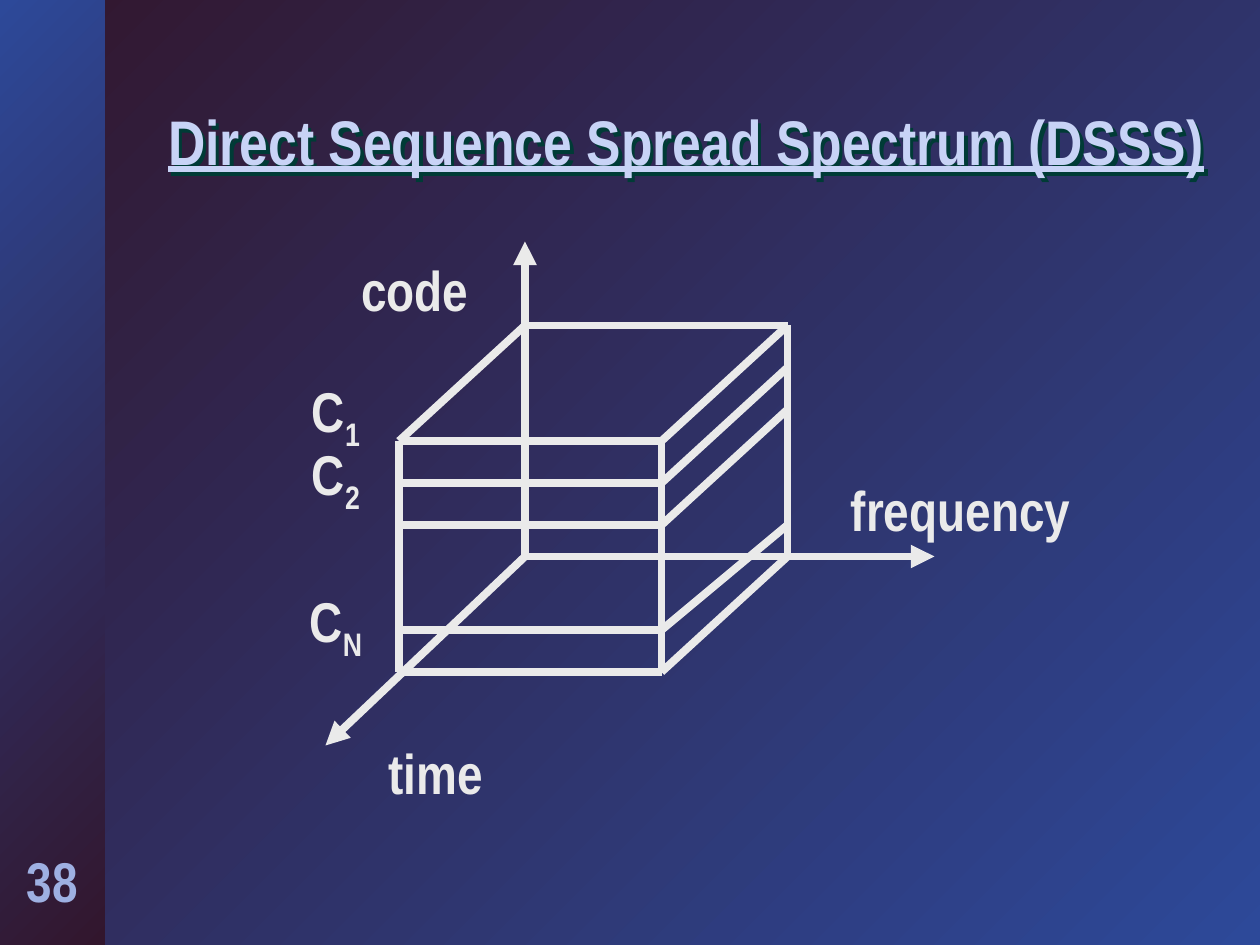
from collections import namedtuple

from lxml.etree import SubElement
from pptx import Presentation
from pptx.dml.color import RGBColor as Rgb
from pptx.enum.shapes import MSO_CONNECTOR as Connector, MSO_SHAPE as Preset
from pptx.enum.text import MSO_ANCHOR as Anchor, PP_ALIGN as Align
from pptx.oxml.ns import qn
from pptx.util import Inches, Pt

COLORS = {"wine": "32162D", "blue": "2D4999", "line": "EAEAEA",
          "title": "C8D3F6", "number": "9EB0E2", "shadow": "003B36"}
CELL = Inches(10) / 120
Box = namedtuple("Box", "left top width height")


def cells(*counts):
    """Turn counts of grid cells into lengths."""
    return [round(count * CELL) for count in counts]


def inside(box, left, top, width, height):
    """Return a box placed relative to the corner of another."""
    return Box(box.left + left, box.top + top, width, height)


def fill_gradient(fill, first, last):
    """Fill with a diagonal gradient from top left to bottom right."""
    fill.gradient()
    fill.gradient_angle = 315
    for stop, name, position in zip(fill.gradient_stops, (first, last), (0, 1)):
        stop.color.rgb = Rgb.from_string(COLORS[name])
        stop.position = position


def add_text(page, box, text, color="line", size=32, subscript="", **font):
    """Add a centred one-line label with an optional subscript."""
    shape = page.shapes.add_textbox(*cells(*box))
    frame = shape.text_frame
    layout = {"word_wrap": False, "vertical_anchor": Anchor.MIDDLE, "margin_left": 0,
              "margin_right": 0, "margin_top": 0, "margin_bottom": 0}
    for name, value in layout.items():
        setattr(frame, name, value)
    para = frame.paragraphs[0]
    para.alignment = Align.CENTER
    style = {"name": "Arial Narrow", "size": Pt(size), "bold": True, **font}
    for part, baseline in ((text, None), (subscript, "-25000")):
        if part:
            span = para.add_run()
            span.text = part
            for name, value in style.items():
                setattr(span.font, name, value)
            span.font.color.rgb = Rgb.from_string(COLORS[color])
            if baseline:
                span.font._element.set("baseline", baseline)
    return shape


def add_line(page, box, start, end, arrow=False):
    """Draw a line between two points of the box, with an optional arrowhead."""
    points = [corner + offset for point in (start, end)
              for corner, offset in zip(box[:2], point)]
    connector = page.shapes.add_connector(Connector.STRAIGHT, *cells(*points))
    connector.line.width = Pt(4.5)
    connector.line.color.rgb = Rgb.from_string(COLORS["line"])
    if arrow:
        SubElement(connector.line._get_or_add_ln(), qn("a:tailEnd"), type="triangle")
    SubElement(connector._element.spPr, qn("a:effectLst"))


def build_sidebar(page, box):
    """Draw the side strip with the page number at its foot."""
    strip = page.shapes.add_shape(Preset.RECTANGLE, *cells(*box))
    strip.shadow.inherit = False
    strip.line.fill.background()
    fill_gradient(strip.fill, "blue", "wine")
    add_text(page, inside(box, 1, 80.1, 8, 7.5), "38", "number")


def build_title(page, box):
    """Place the underlined title and its shadow."""
    title = add_text(page, box, "Direct Sequence Spread Spectrum (DSSS)", "title",
                     36, underline=True)
    frame = title.text_frame
    layout = {"word_wrap": True, "vertical_anchor": Anchor.TOP,
              "margin_left": Inches(0.1), "margin_right": Inches(0.1),
              "margin_top": Inches(0.05), "margin_bottom": Inches(0.05)}
    for name, value in layout.items():
        setattr(frame, name, value)
    frame.paragraphs[0].line_spacing = 0.9
    effects = SubElement(title._element.spPr, qn("a:effectLst"))
    shadow = SubElement(effects, qn("a:outerShdw"), dist=str(Pt(2.8)), dir="2700000")
    SubElement(shadow, qn("a:srgbClr"), val=COLORS["shadow"])


def build_cube(page, box):
    """Draw the axes, the cube, its code layers and all labels."""
    back_left, back_right, back_top, back_bottom = 21, 46, 8, 30
    front_left, front_right, front_top, front_bottom = 9, 34, 19, 41
    origin = (back_left, back_bottom)
    for tip in ((back_left, 0), (60, back_bottom), (2, 48)):
        add_line(page, box, origin, tip, arrow=True)
    add_line(page, box, (back_left, back_top), (back_right, back_top))
    add_line(page, box, (back_left, back_top), (front_left, front_top))
    for side, top, bottom in ((back_right, back_top, back_bottom),
                              (front_left, front_top, front_bottom),
                              (front_right, front_top, front_bottom)):
        add_line(page, box, (side, top), (side, bottom))
    layers = ((front_top, back_top), (23, 12), (27, 16), (37, 27),
              (front_bottom, back_bottom))
    for front, back in layers:
        add_line(page, box, (front_left, front), (front_right, front))
        add_line(page, box, (front_right, front), (back_right, back))
    for text, left, top, width in (("code", 2, 2, 17), ("time", 4, 48, 17),
                                   ("frequency", 49, 23, 27)):
        add_text(page, inside(box, left, top, width, 5), text)
    for subscript, top in (("1", 14), ("2", 20), ("N", 34)):
        add_text(page, inside(box, 0, top, 6, 5), "C", subscript=subscript)


def main():
    """Build the slide and save the deck."""
    deck = Presentation()
    deck.slide_width, deck.slide_height = cells(120, 90)
    page = deck.slides.add_slide(deck.slide_layouts[6])
    fill_gradient(page.background.fill, "wine", "blue")
    build_sidebar(page, Box(0, 0, 10, 90))
    build_title(page, Box(13.6, 10, 103.5, 8))
    build_cube(page, Box(29, 23, 76, 53))
    deck.save("out.pptx")


if __name__ == "__main__":
    main()
